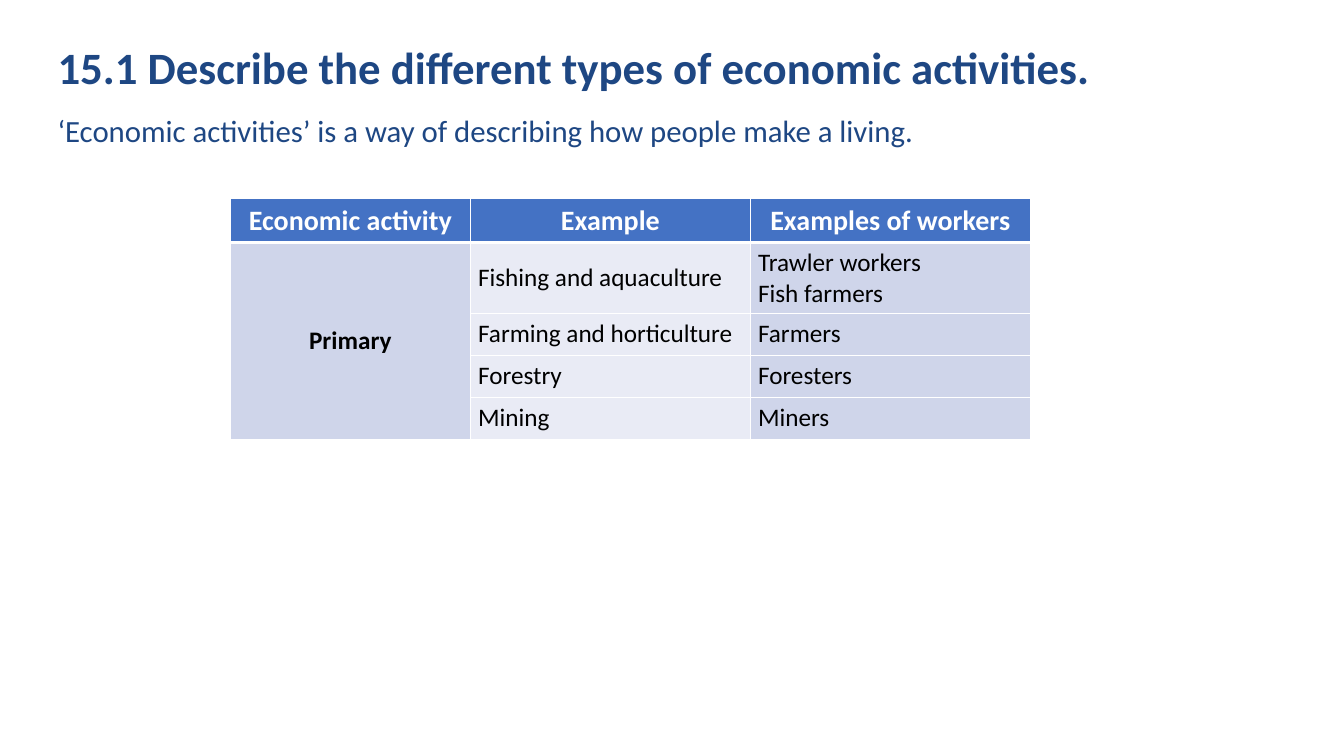
from pptx import Presentation
from pptx.util import Pt
from pptx.dml.color import RGBColor as RGB
from pptx.enum.text import PP_ALIGN as Align, MSO_ANCHOR as Anchor
from pptx.oxml import parse_xml
from pptx.oxml.ns import nsdecls

INK = {"navy": "1E4783", "head": "4472C4", "mid": "CFD5EA",
       "pale": "E9EBF5", "white": "FFFFFF", "black": "000000"}


def write(frame, text, color, align=Align.LEFT, **fmt):
    """Fill a text frame, one paragraph a line."""
    frame.text = text
    for para in frame.paragraphs:
        para.alignment = align
        for run in para.runs:
            run.font.color.rgb = RGB.from_string(INK[color])
            for key, val in {"name": "Calibri", **fmt}.items():
                setattr(run.font, key, val)


def edge(cell, sides):
    """Draw white cell borders; sides maps a side to its width."""
    props = cell._tc.get_or_add_tcPr()
    for spot, (side, width) in enumerate(sides.items()):
        props.insert(spot, parse_xml(
            f'<a:ln{side} {nsdecls("a")} w="{Pt(width)}"><a:solidFill>'
            f'<a:srgbClr val="{INK["white"]}"/></a:solidFill></a:ln{side}>'))


deck = Presentation()
deck.slide_width, deck.slide_height = Pt(960), Pt(540)
slide = deck.slides.add_slide(deck.slide_layouts[6])

# Title and lead sentence
title = slide.shapes.add_textbox(Pt(34), Pt(28), Pt(887), Pt(44)).text_frame
title.word_wrap = True
title.vertical_anchor = Anchor.MIDDLE
write(title, "15.1 Describe the different types of economic activities.",
      "navy", size=Pt(32), bold=True)
title.paragraphs[0].line_spacing = 0.9

lead = slide.shapes.add_textbox(Pt(34), Pt(76.5), Pt(633), Pt(34)).text_frame
lead.word_wrap = False
write(lead, "‘Economic activities’ is a way of describing how people make a living.",
      "navy", size=Pt(22))

# Table of activities
rows = [
    ("Economic activity", "Example", "Examples of workers"),
    ("Primary", "Fishing and aquaculture", "Trawler workers\nFish farmers"),
    ("", "Farming and horticulture", "Farmers"),
    ("", "Forestry", "Foresters"),
    ("", "Mining", "Miners"),
]
wide = [171.5, 200, 200]
high = [30, 50.5, 30, 30, 30]
table = slide.shapes.add_table(len(rows), len(wide), Pt(164.5), Pt(142),
                               Pt(sum(wide)), Pt(sum(high))).table
for col, width in zip(table.columns, wide):
    col.width = Pt(width)
for row, height in zip(table.rows, high):
    row.height = Pt(height)

inset = {"margin_left": Pt(5.5), "margin_right": Pt(5.5),
         "margin_top": Pt(3.6), "margin_bottom": Pt(3.6)}
for r, texts in enumerate(rows):
    for c, text in enumerate(texts):
        cell = table.cell(r, c)
        for key, val in inset.items():
            setattr(cell, key, val)
        fill = "head" if r == 0 else "pale" if c == 1 else "mid"
        cell.fill.solid()
        cell.fill.fore_color.rgb = RGB.from_string(INK[fill])
        edge(cell, {"L": 1, "R": 1, "T": 3 if r == 1 else 1,
                    "B": 3 if r == 0 else 1})
        if r == 1 and c < 2:
            cell.vertical_anchor = Anchor.MIDDLE
        if text:
            write(cell.text_frame, text, "black" if r else "white",
                  Align.CENTER if r == 0 or c == 0 else Align.LEFT,
                  size=Pt(18 if r else 20), bold=r == 0 or c == 0)
table.cell(1, 0).merge(table.cell(4, 0))

deck.save("out.pptx")
